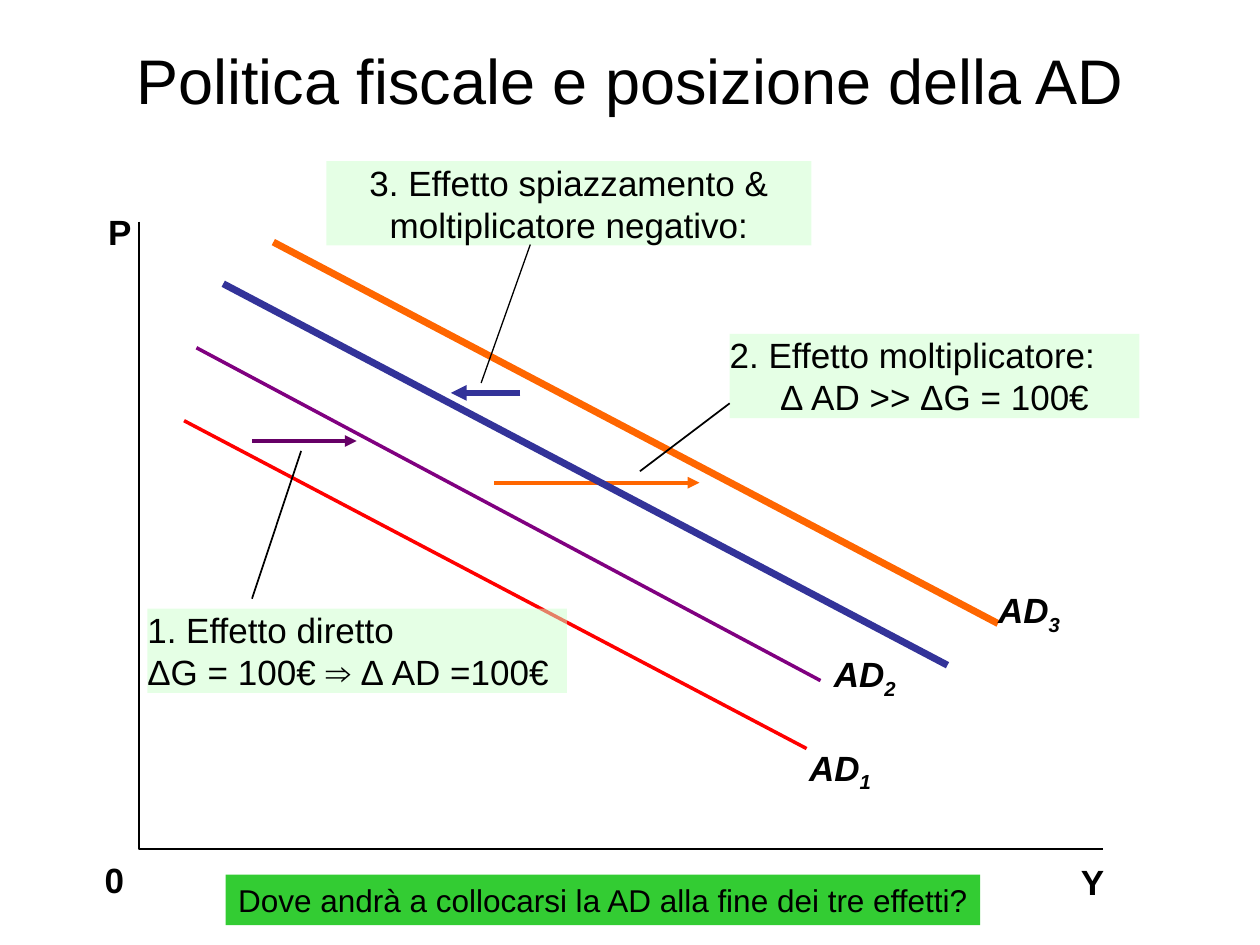
"""Build a slide on fiscal policy and the position of the AD curve."""
import dataclasses

import lxml.etree
import pptx
import pptx.dml.color
import pptx.enum.shapes
import pptx.enum.text
import pptx.oxml
import pptx.oxml.ns
import pptx.util

Cm = pptx.util.Cm
Pt = pptx.util.Pt
Align = pptx.enum.text.PP_ALIGN
Anchor = pptx.enum.text.MSO_ANCHOR
qn = pptx.oxml.ns.qn


@dataclasses.dataclass(frozen=True)
class Theme:
    """Colours, font and type sizes of the slide."""
    font: str = "Arial"
    black: str = "000000"
    red: str = "FF0000"
    purple: str = "800080"
    plum: str = "660066"
    orange: str = "FF6600"
    blue: str = "333399"
    mint: str = "CCFFCC"
    green: str = "33CC33"
    title: int = 36
    body: int = 20
    ask: int = 18


THEME = Theme()


def rgb(code):
    """Turn a hex code into a colour."""
    return pptx.dml.color.RGBColor.from_string(code)


def write(para, text, size=THEME.body, bold=False, slant=False, sub=False, align=Align.LEFT):
    """Add a run of text to a paragraph in the given format."""
    para.alignment = align
    run = para.add_run()
    run.text = text
    font = run.font
    font.name, font.size = THEME.font, Pt(size)
    font.bold, font.italic = bold, slant
    font.color.rgb = rgb(THEME.black)
    if sub:
        run._r.get_or_add_rPr().set("baseline", "-25000")


def trim(frame, wrap=True):
    """Clear the margins of a text frame and set its wrapping."""
    frame.margin_left = frame.margin_right = frame.margin_top = frame.margin_bottom = 0
    frame.word_wrap = wrap
    frame.vertical_anchor = Anchor.TOP


def label(slide, left, top, text, index=""):
    """Place a bold label, slanted and with a subscript if it has an index."""
    box = slide.shapes.add_textbox(Cm(left), Cm(top), Cm(1.4 if index else 0.5), Cm(0.85))
    trim(box.text_frame, wrap=False)
    para = box.text_frame.paragraphs[0]
    write(para, text, bold=True, slant=bool(index))
    if index:
        write(para, index, bold=True, slant=True, sub=True)


def line(slide, start, end, color, width, arrow=False):
    """Draw a straight line, with an arrowhead at its end if asked."""
    kind = pptx.enum.shapes.MSO_CONNECTOR.STRAIGHT
    link = slide.shapes.add_connector(kind, *map(Cm, start + end))
    link.line.color.rgb = rgb(color)
    link.line.width = Pt(width)
    if arrow:
        lxml.etree.SubElement(link.line._get_or_add_ln(), qn("a:tailEnd"), type="triangle")
    lxml.etree.SubElement(link._element.spPr, qn("a:effectLst"))


def panel(slide, left, top, width, height, color, alpha=None):
    """Add a plain filled box and return its text frame."""
    kind = pptx.enum.shapes.MSO_SHAPE.RECTANGLE
    box = slide.shapes.add_shape(kind, *map(Cm, (left, top, width, height)))
    box.shadow.inherit = False
    box.fill.solid()
    box.fill.fore_color.rgb = rgb(color)
    box.line.fill.background()
    if alpha:
        tint = box._element.spPr.find(".//" + qn("a:srgbClr"))
        lxml.etree.SubElement(tint, qn("a:alpha"), val=str(alpha * 1000))
    return box.text_frame


def note(slide, left, top, width, rows):
    """Add a pale note with one paragraph for each row."""
    frame = panel(slide, left, top, width, 1.7, THEME.mint, alpha=50)
    trim(frame)
    for pos, (text, align) in enumerate(rows):
        para = frame.add_paragraph() if pos else frame.paragraphs[0]
        write(para, text, align=align)


def axes(slide):
    """Draw both axes as one open outline and label them."""
    pen = slide.shapes.build_freeform(Cm(2.8), Cm(4.47))
    pen.add_line_segments([(Cm(2.8), Cm(17.12)), (Cm(22.24), Cm(17.12))], close=False)
    path = pen.convert_to_shape()
    path.shadow.inherit = False
    path.fill.background()
    path.line.color.rgb = rgb(THEME.black)
    path.line.width = Pt(1)
    for left, top, text in ((2.18, 4.24, "P"), (2.11, 17.3, "0"), (21.79, 17.35, "Y")):
        label(slide, left, top, text)


def head(slide, text):
    """Fill and place the title."""
    title = slide.shapes.title
    title.left, title.top, title.width, title.height = map(Cm, (0, 0.71, 25.4, 1.78))
    title.text_frame.vertical_anchor = Anchor.TOP
    write(title.text_frame.paragraphs[0], text, size=THEME.title, align=Align.CENTER)


def main():
    """Build and save the slide."""
    deck = pptx.Presentation()
    deck.slide_width, deck.slide_height = Cm(25.4), Cm(19.05)
    slide = deck.slides.add_slide(deck.slide_layouts[5])
    head(slide, "Politica fiscale e posizione della AD")
    axes(slide)

    line(slide, (3.96, 7.01), (16.54, 13.72), THEME.purple, 2)
    line(slide, (3.71, 8.48), (16.26, 15.09), THEME.red, 2)
    line(slide, (6.07, 9.09), (5.08, 12.07), THEME.black, 1)
    note(slide, 2.97, 12.27, 8.46, [
        ("1. Effetto diretto", Align.LEFT),
        ("ΔG = 100€ ⇒ Δ AD =100€", Align.LEFT)])
    line(slide, (5.51, 4.88), (20.12, 12.57), THEME.orange, 4)
    note(slide, 14.71, 6.73, 8.26, [
        ("2. Effetto moltiplicatore:", Align.LEFT),
        ("Δ AD >> ΔG = 100€", Align.CENTER)])
    line(slide, (14.71, 8.13), (12.9, 9.5), THEME.black, 1)
    line(slide, (5.08, 8.89), (7.19, 8.89), THEME.plum, 2.25, arrow=True)
    line(slide, (9.96, 9.73), (14.1, 9.73), THEME.orange, 2.25, arrow=True)
    line(slide, (4.5, 5.72), (19.1, 13.41), THEME.blue, 4)
    line(slide, (10.49, 7.92), (9.09, 7.92), THEME.blue, 3, arrow=True)
    note(slide, 6.58, 3.25, 9.78, [
        ("3. Effetto spiazzamento & moltiplicatore negativo:", Align.CENTER)])
    line(slide, (10.69, 4.93), (9.7, 7.72), THEME.black, 0.75)

    for left, top, index in ((16.31, 15.04, "1"), (16.81, 13.16, "2"), (20.12, 11.86, "3")):
        label(slide, left, top, "AD", index)
    frame = panel(slide, 4.55, 17.63, 15.21, 1.02, THEME.green)
    frame.word_wrap = True
    frame.vertical_anchor = Anchor.TOP
    write(frame.paragraphs[0], "Dove andrà a collocarsi la AD alla fine dei tre effetti?",
          size=THEME.ask)
    deck.save("out.pptx")


if __name__ == "__main__":
    main()
